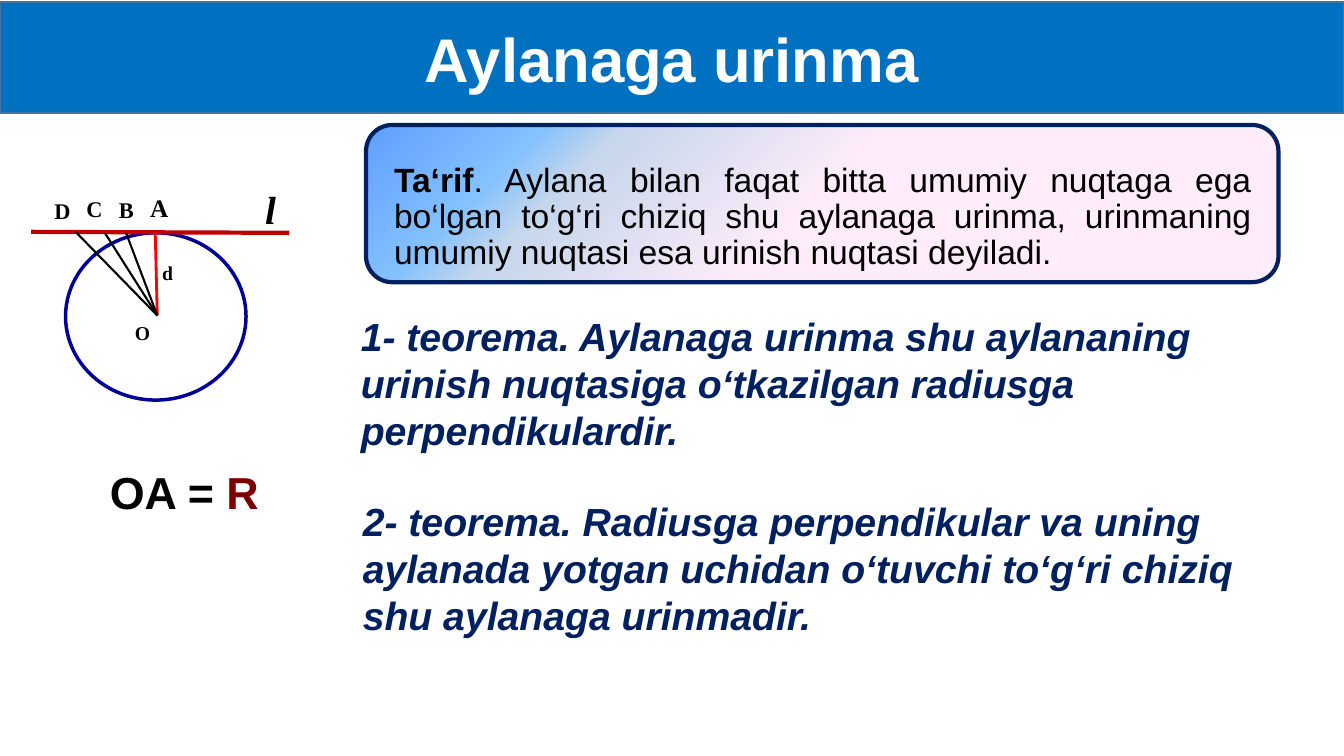
from lxml.etree import SubElement
from pptx import Presentation
from pptx.dml.color import RGBColor
from pptx.enum.shapes import MSO_CONNECTOR, MSO_SHAPE
from pptx.enum.text import MSO_ANCHOR, MSO_AUTO_SIZE, PP_ALIGN
from pptx.oxml import parse_xml
from pptx.oxml.ns import nsdecls, qn
from pptx.util import Inches, Pt

COLORS = {
    "white": "FFFFFF", "black": "000000", "band": "0070C0", "band_edge": "43739E",
    "navy": "002060", "circle": "000099", "tangent": "C00000", "radius": "FF0000",
    "maroon": "7A0000",
}


def add_run(paragraph, text, color, **font_format):
    run = paragraph.add_run()
    run.text = text
    run.font.color.rgb = RGBColor.from_string(COLORS[color])
    for name, value in font_format.items():
        setattr(run.font, name, value)


def add_text_box(left, top, width, height, wrap):
    frame = slide.shapes.add_textbox(
        Inches(left), Inches(top), Inches(width), Inches(height)).text_frame
    frame.word_wrap = wrap
    frame.auto_size = MSO_AUTO_SIZE.SHAPE_TO_FIT_TEXT
    return frame


presentation = Presentation()
presentation.slide_width = Inches(13.33)
presentation.slide_height = Inches(7.5)
slide = presentation.slides.add_slide(presentation.slide_layouts[5])

# Title band
title = slide.shapes.title
title.left, title.top, title.width, title.height = (
    Inches(value) for value in (0, 0.02, 13.33, 1.1))
title.fill.solid()
title.fill.fore_color.rgb = RGBColor.from_string(COLORS["band"])
title.line.color.rgb = RGBColor.from_string(COLORS["band_edge"])
title.line.width = Pt(1)
title.text_frame.vertical_anchor = MSO_ANCHOR.MIDDLE
paragraph = title.text_frame.paragraphs[0]
paragraph.alignment = PP_ALIGN.CENTER
add_run(paragraph, "Aylanaga urinma", "white", name="Arial", size=Pt(44), bold=True)

# Definition panel with a diagonal gradient
panel = slide.shapes.add_shape(
    MSO_SHAPE.ROUNDED_RECTANGLE, Inches(3.63), Inches(1.24), Inches(9.05), Inches(1.56))
panel.shadow.inherit = False
panel.line.color.rgb = RGBColor.from_string(COLORS["navy"])
panel.line.width = Pt(3)
gradient_stops = [(0, "5E9EFF", 100), (17, "85C2FF", 100),
                  (24, "C4D6EB", 100), (49, "FFEBFA", 93)]
stops = "".join(
    f'<a:gs pos="{position * 1000}"><a:srgbClr val="{color}">'
    f'<a:alpha val="{opacity * 1000}"/></a:srgbClr></a:gs>'
    for position, color, opacity in gradient_stops)
gradient = parse_xml(
    f'<a:gradFill {nsdecls("a")} rotWithShape="1"><a:gsLst>{stops}</a:gsLst>'
    '<a:lin ang="2700000" scaled="1"/></a:gradFill>')
panel.element.spPr.find(qn("a:prstGeom")).addnext(gradient)

# Definition text
definition = add_text_box(3.81, 1.57, 8.7, 1.02, True)
definition.auto_size = MSO_AUTO_SIZE.NONE
paragraph = definition.paragraphs[0]
paragraph.alignment = PP_ALIGN.JUSTIFY
paragraph.line_spacing = 0.9
add_run(paragraph, "Ta‘rif", "black", name="Arial", size=Pt(24), bold=True)
add_run(paragraph, ". Aylana bilan faqat bitta umumiy nuqtaga ega bo‘lgan to‘g‘ri chiziq "
        "shu aylanaga urinma, urinmaning umumiy nuqtasi esa urinish nuqtasi deyiladi.",
        "black", name="Arial", size=Pt(24), bold=False)

# Theorems
theorems = [
    (3.48, 3.05, 9.46, 1.51, "1- teorema. Aylanaga urinma shu aylananing urinish "
     "nuqtasiga o‘tkazilgan radiusga perpendikulardir."),
    (3.5, 4.88, 9.56, 1.87, "2- teorema. Radiusga perpendikular va uning aylanada yotgan "
     "uchidan o‘tuvchi to‘g‘ri chiziq shu aylanaga urinmadir."),
]
for left, top, width, height, text in theorems:
    frame = add_text_box(left, top, width, height, True)
    add_run(frame.paragraphs[0], text, "navy",
            name="Arial", size=Pt(28), bold=True, italic=True)

# Circle
circle = slide.shapes.add_shape(
    MSO_SHAPE.OVAL, Inches(0.65), Inches(2.31), Inches(1.79), Inches(1.66))
circle.shadow.inherit = False
circle.fill.background()
circle.line.color.rgb = RGBColor.from_string(COLORS["circle"])
circle.line.width = Pt(2.5)

# Tangent, radius and slanted segments from the tangent to the centre
center = (1.56, 3.13)
segments = [
    ((2.87, 2.31), (0.31, 2.3), "tangent", 3),
    ((1.54, 2.31), center, "radius", 2),
    ((1.25, 2.31), center, "black", 1.5),
    ((1.04, 2.31), center, "black", 1.5),
    ((0.75, 2.3), center, "black", 1.5),
]
for start, end, color, width in segments:
    segment = slide.shapes.add_connector(
        MSO_CONNECTOR.STRAIGHT, *(Inches(value) for value in start + end))
    segment.line.color.rgb = RGBColor.from_string(COLORS[color])
    segment.line.width = Pt(width)
    SubElement(segment.element.spPr, qn("a:effectLst"))

# Point and line labels
labels = [
    ("l", 2.53, 1.79, 0.31, 0.57, 28),
    ("A", 1.39, 1.86, 0.38, 0.4, 18),
    ("B", 1.08, 1.9, 0.35, 0.37, 16),
    ("C", 0.76, 1.89, 0.36, 0.37, 16),
    ("D", 0.44, 1.91, 0.36, 0.37, 16),
    ("O", 1.24, 3.13, 0.36, 0.34, 14),
    ("d", 1.51, 2.54, 0.31, 0.34, 14),
]
for text, left, top, width, height, size in labels:
    frame = add_text_box(left, top, width, height, False)
    add_run(frame.paragraphs[0], text, "black", name="Times New Roman",
            size=Pt(size), bold=True, italic=text == "l")

# Radius equation
equation = add_text_box(0.99, 4.56, 1.69, 0.64, False).paragraphs[0]
for text, color in (("OA =", "black"), (" R", "maroon")):
    add_run(equation, text, color, name="Arial", size=Pt(32), bold=True)

presentation.save("out.pptx")
